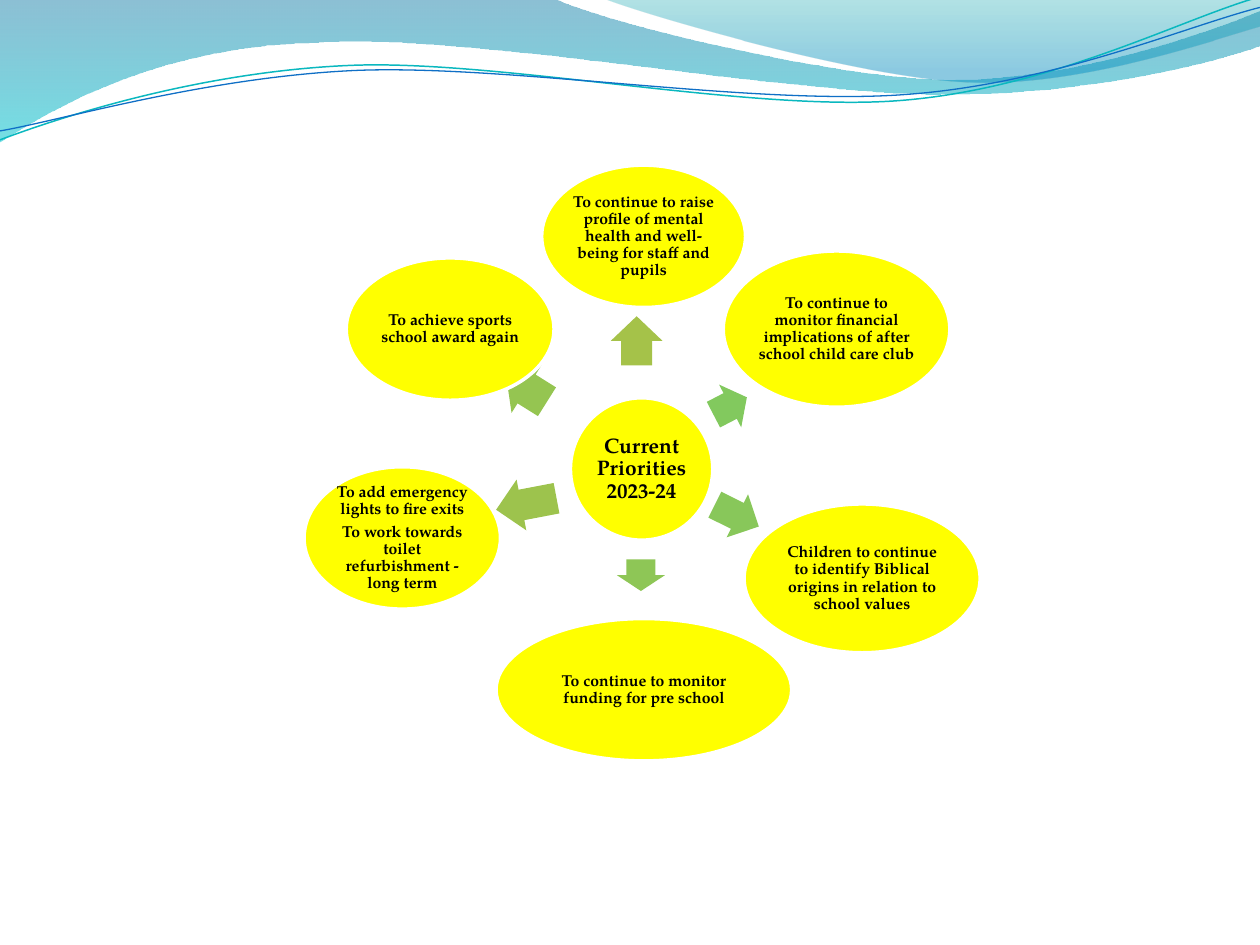
import math

import lxml.etree
import pptx
import pptx.dml.color
import pptx.enum.shapes
import pptx.enum.text
import pptx.oxml
import pptx.oxml.ns
import pptx.util

Cm = pptx.util.Cm
Pt = pptx.util.Pt
qn = pptx.oxml.ns.qn
SHAPES = pptx.enum.shapes.MSO_SHAPE
FONT = "TeX Gyre Pagella"
LINE_TILT = -2.7

# Wave outlines in cm: two numbers make a straight line, six a Bezier curve
LOWER_BAND = [
    (0, 0), (11.18, -0.02),
    (12.09, 0.43, 16.87, 1.6, 19.25, 1.6),
    (21.67, 1.6, 24.33, 0.66, 25.4, 0.23),
    (25.43, 0.91),
    (24.97, 1.12, 22.1, 1.93, 18.95, 1.9),
    (15.8, 1.9, 9.7, 0.71, 6.53, 0.86),
    (3.28, 0.91, 1.17, 2.11, -0.03, 2.87),
    (0, 0),
]
UPPER_BAND = [
    (12.17, -0.03),
    (12.93, 0.28, 17.32, 1.57, 19.53, 1.65),
    (21.74, 1.75, 24.41, 0.81, 25.4, 0.53),
    (25.4, 0), (12.17, -0.03),
]
TEAL_LINE = [
    (0, 2.82),
    (1.22, 2.36, 4.01, 1.45, 7.04, 1.32),
    (10.03, 1.19, 15.06, 2.26, 18.11, 2.03),
    (21.16, 1.8, 23.83, 0.38, 25.35, -0.05),
]
BLUE_LINE = [
    (0, 2.64),
    (1.19, 2.44, 4.17, 1.55, 7.19, 1.42),
    (10.24, 1.3, 15.16, 2.13, 18.21, 1.91),
    (21.23, 1.7, 23.9, 0.53, 25.4, 0.15),
]

# Left, top, width, height in cm within the diagram, then rotation and colour
ARROWS = [
    (8.22, 4.37, 0.76, 0.97, 332.6, "82C95E"),
    (8.24, 6.58, 0.99, 0.97, 26.4, "88C75A"),
    (6.48, 7.78, 0.64, 0.97, 90, "8EC656"),
    (4.01, 3.94, 0.97, 1.14, 212.1, "95C551"),
    (3.87, 6.31, 1.24, 1.04, 169.2, "9DC34D"),
    (6.22, 3.02, 0.99, 1.04, 270, "A5C249"),
]
# Left, top, width, height in cm within the diagram, then the paragraphs
PRIORITIES = [
    (4.8, 0, 4.11, 2.87,
     ["To continue to raise profile of mental health and well-being for staff and pupils"]),
    (8.46, 1.73, 4.57, 3.15,
     ["To continue to monitor financial implications of after school child care club"]),
    (8.88, 6.83, 4.76, 3,
     ["Children to continue to identify Biblical origins in relation to school values"]),
    (3.88, 9.14, 5.96, 2.87, ["To continue to monitor funding for pre school"]),
    (0.01, 6.08, 3.96, 2.87,
     ["To add emergency lights to fire exits",
      "To work towards toilet refurbishment - long term"]),
    (0.86, 1.87, 4.19, 2.87, ["To achieve sports school award again"]),
]


def color(hex_code):
    return pptx.dml.color.RGBColor.from_string(hex_code)


def rotate(point, degrees):
    """Turn a point clockwise about the page corner."""
    x, y = point
    cosine, sine = math.cos(math.radians(degrees)), math.sin(math.radians(degrees))
    return x * cosine - y * sine, x * sine + y * cosine


def add_wave(page, left, top, outline, tilt=0):
    """Draw an outline; a tilted one is laid level and then turned as a shape."""
    points = [rotate((left + segment[i], top + segment[i + 1]), -tilt)
              for segment in outline for i in range(0, len(segment), 2)]
    points = [(Cm(x), Cm(y)) for x, y in points]
    builder = page.shapes.build_freeform(*points[0])
    builder.add_line_segments(points[1:], close=False)
    wave = builder.convert_to_shape()
    wave.shadow.inherit = False

    # Join each curve's two handles and end point into one Bezier segment
    steps = iter(list(wave._element.iter(qn("a:lnTo"))))
    for segment in outline[1:]:
        first = next(steps)
        if len(segment) == 6:
            first.tag = qn("a:cubicBezTo")
            for _ in range(2):
                step = next(steps)
                first.append(step[0])
                step.getparent().remove(step)
    if outline[0] == outline[-1]:
        lxml.etree.SubElement(next(wave._element.iter(qn("a:path"))), qn("a:close"))

    center = wave.left + wave.width / 2, wave.top + wave.height / 2
    x, y = rotate(center, tilt)
    wave.left, wave.top = round(x - wave.width / 2), round(y - wave.height / 2)
    wave.rotation = tilt
    return wave


def fill_gradient(shape, stops):
    """Top-to-bottom gradient; each stop is position, colour and opacity in percent."""
    shape.fill.background()
    no_fill = shape._element.spPr.find(qn("a:noFill"))
    stop_xml = "".join(
        f'<a:gs pos="{position * 1000}"><a:srgbClr val="{hex_code}">'
        f'<a:alpha val="{opacity * 1000}"/></a:srgbClr></a:gs>'
        for position, hex_code, opacity in stops)
    gradient = pptx.oxml.parse_xml(
        f'<a:gradFill {pptx.oxml.ns.nsdecls("a")} rotWithShape="1">'
        f'<a:gsLst>{stop_xml}</a:gsLst><a:lin ang="5400000" scaled="0"/></a:gradFill>')
    no_fill.getparent().replace(no_fill, gradient)


def add_header(page, left, top):
    # Translucent bands
    for outline, stops in (
        (LOWER_BAND, [(0, "0074A1", 45), (100, "00C6CF", 55)]),
        (UPPER_BAND, [(0, "00A1A9", 30), (80, "008BBF", 45)]),
    ):
        band = add_wave(page, left, top, outline)
        band.line.fill.background()
        fill_gradient(band, stops)
    # Thin wavy lines
    for outline, hex_code, width in ((TEAL_LINE, "0AB8BF", 0.85),
                                     (BLUE_LINE, "0F6FC6", 0.75)):
        wave = add_wave(page, left, top, outline, LINE_TILT)
        wave.fill.background()
        wave.line.color.rgb = color(hex_code)
        wave.line.width = Pt(width)


def add_solid(page, preset, box, fill):
    shape = page.shapes.add_shape(preset, *(Cm(length) for length in box))
    shape.shadow.inherit = False
    shape.fill.solid()
    shape.fill.fore_color.rgb = color(fill)
    return shape


def add_bubble(page, box, texts, size, inset):
    bubble = add_solid(page, SHAPES.OVAL, box, "FFFF00")
    bubble.line.color.rgb = color("FFFFFF")
    bubble.line.width = Pt(2)
    frame = bubble.text_frame
    frame.word_wrap = True
    frame.vertical_anchor = pptx.enum.text.MSO_ANCHOR.MIDDLE
    frame.margin_left = frame.margin_right = Cm(inset)
    frame.margin_top = frame.margin_bottom = Cm(inset)
    frame.text = "\n".join(texts)
    for para in frame.paragraphs:
        para.alignment = pptx.enum.text.PP_ALIGN.CENTER
        para.line_spacing = 0.9
        para.space_after = Pt(0.35 * size)
        para.font.name = FONT
        para.font.size = Pt(size)
        para.font.bold = True
        para.font.color.rgb = color("000000")


def add_priorities(page, left, top):
    # Arrows from the centre outwards
    for x, y, width, height, rotation, fill in ARROWS:
        arrow = add_solid(page, SHAPES.RIGHT_ARROW, (left + x, top + y, width, height), fill)
        arrow.line.fill.background()
        arrow.adjustments[0] = 0.6
        arrow.adjustments[1] = 0.5
        arrow.rotation = rotation
    # Centre and surrounding bubbles
    add_bubble(page, (left + 5.38, top + 4.69, 2.87, 2.87),
               ["Current Priorities 2023-24"], 12, 0.04)
    for x, y, width, height, texts in PRIORITIES:
        add_bubble(page, (left + x, top + y, width, height), texts, 9, 0.03)


def main():
    deck = pptx.Presentation()
    deck.slide_width, deck.slide_height = Cm(25.4), Cm(19.05)
    page = deck.slides.add_slide(deck.slide_layouts[6])
    add_header(page, 0, 0)
    add_priorities(page, 6.12, 3.33)
    deck.save("out.pptx")


if __name__ == "__main__":
    main()
